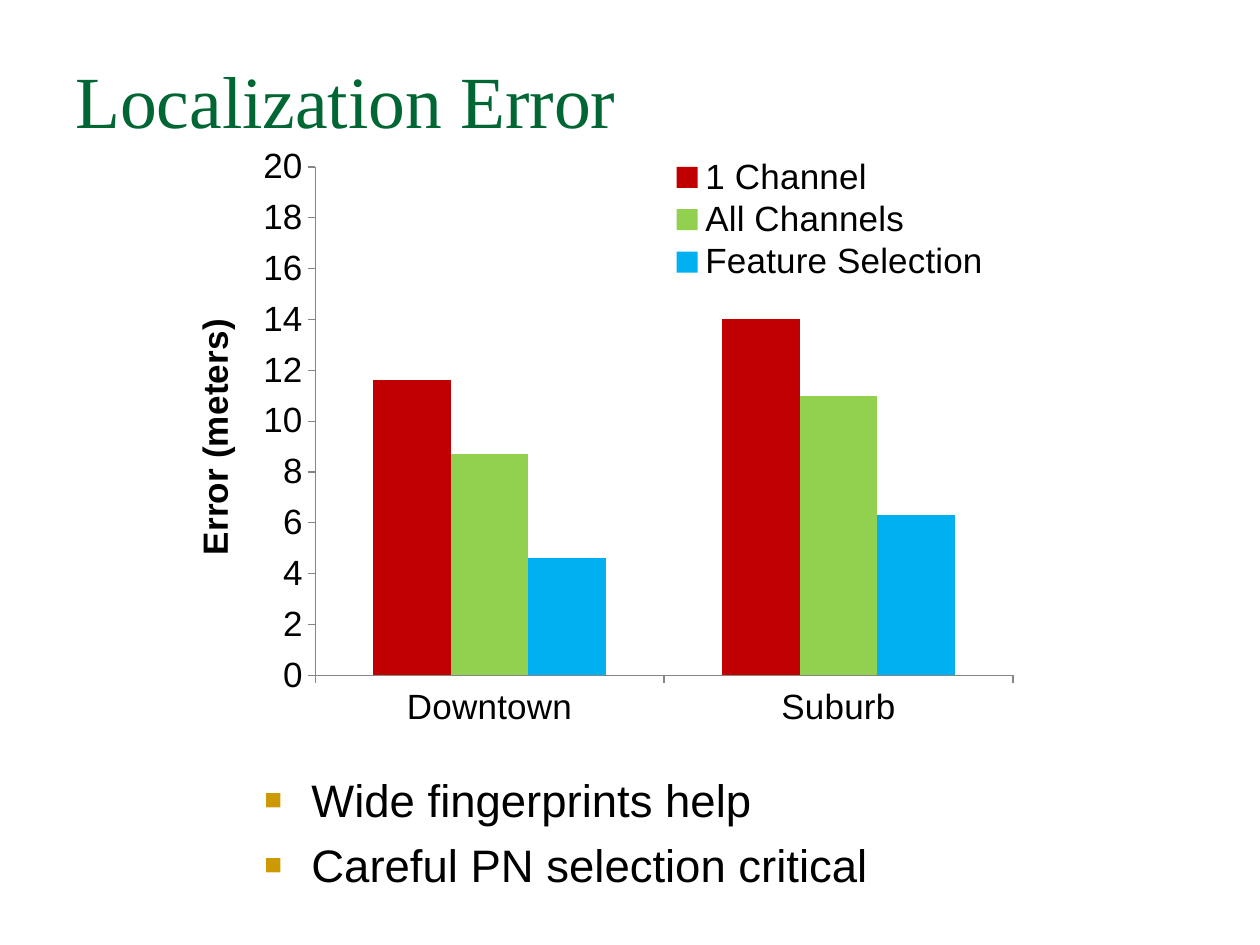
"""Build the localization error slide with a clustered column chart."""
from lxml.etree import SubElement
from pptx import Presentation
from pptx.chart.data import CategoryChartData
from pptx.dml.color import RGBColor
from pptx.enum.chart import XL_CHART_TYPE as ChartType
from pptx.enum.chart import XL_LEGEND_POSITION as LegendPosition
from pptx.enum.chart import XL_TICK_MARK as TickMark
from pptx.enum.text import MSO_ANCHOR as Anchor
from pptx.oxml.ns import qn
from pptx.util import Emu, Pt

PX_PER_INCH = 126
BLACK = "000000"
AXIS_GREY = "868686"
ERRORS = [
    ("1 Channel", "C00000", (11.6, 14)),
    ("All Channels", "92D050", (8.7, 11)),
    ("Feature Selection", "00B0F0", (4.6, 6.3)),
]


def px(length):
    return Emu(round(length * 914400 / PX_PER_INCH))


def rgb(hex_color):
    return RGBColor.from_string(hex_color)


def set_font(font, family, size, color):
    font.name, font.size = family, Pt(size)
    font.color.rgb = rgb(color)


def add_text(slide, box, lines, family, size, color):
    frame = slide.shapes.add_textbox(*map(px, box)).text_frame
    frame.word_wrap = True
    frame.vertical_anchor = Anchor.TOP
    frame.text = "\n".join(lines)
    for paragraph in frame.paragraphs:
        set_font(paragraph.font, family, size, color)
    return frame


def add_bullet(paragraph, symbol, color, percent, indent):
    paragraph.space_before = Pt(6)
    properties = paragraph._p.get_or_add_pPr()
    properties.set("marL", str(px(indent)))
    properties.set("indent", str(-px(indent)))
    bullet_color = SubElement(properties, qn("a:buClr"))
    SubElement(bullet_color, qn("a:srgbClr"), val=color)
    SubElement(properties, qn("a:buSzPct"), val=str(percent * 1000))
    SubElement(properties, qn("a:buFont"), typeface="Arial")
    SubElement(properties, qn("a:buChar"), char=symbol)
    defaults = properties.find(qn("a:defRPr"))
    if defaults is not None:
        properties.append(defaults)


def set_layout(part, x, y, w, h, inner=False):
    layout = part.get_or_add_layout() if hasattr(part, "get_or_add_layout") else part.find(qn("c:layout"))
    if layout is None:
        layout = SubElement(part, qn("c:layout"))
        part.insert(0, layout)
    for child in list(layout):
        layout.remove(child)
    manual = SubElement(layout, qn("c:manualLayout"))
    if inner:
        SubElement(manual, qn("c:layoutTarget"), val="inner")
    for mode in ("xMode", "yMode"):
        SubElement(manual, qn(f"c:{mode}"), val="edge")
    for side, share in zip("xywh", (x, y, w, h)):
        SubElement(manual, qn(f"c:{side}"), val=str(share))


def style_axis(axis):
    axis.has_major_gridlines = False
    axis.major_tick_mark = TickMark.OUTSIDE
    axis.minor_tick_mark = TickMark.NONE
    axis.format.line.color.rgb = rgb(AXIS_GREY)
    axis.format.line.width = Pt(0.75)


def add_error_chart(slide, box):
    data = CategoryChartData()
    data.categories = ["Downtown", "Suburb"]
    for name, _, errors in ERRORS:
        data.add_series(name, errors)
    chart = slide.shapes.add_chart(ChartType.COLUMN_CLUSTERED, *map(px, box), data).chart
    set_font(chart.font, "Arial", 20, BLACK)
    chart.has_title = False

    plot = chart.plots[0]
    plot.gap_width, plot.overlap = 150, 0
    plot.vary_by_categories = False
    for series, (_, color, _) in zip(plot.series, ERRORS):
        series.format.fill.solid()
        series.format.fill.fore_color.rgb = rgb(color)

    error_axis = chart.value_axis
    for axis in (chart.category_axis, error_axis):
        style_axis(axis)
    error_axis.minimum_scale, error_axis.maximum_scale = 0, 20
    error_axis.major_unit = 2
    error_axis.tick_labels.number_format = "General"
    error_axis.tick_labels.number_format_is_linked = False
    axis_title = error_axis.axis_title.text_frame
    axis_title.text = "Error (meters)"
    title_font = axis_title.paragraphs[0].font
    set_font(title_font, "Arial", 20, BLACK)
    title_font.bold = True

    chart.has_legend = True
    chart.legend.position = LegendPosition.RIGHT
    chart.legend.include_in_layout = True
    legend = chart.legend._element
    legend_layout = legend.find(qn("c:layout"))
    if legend_layout is None:
        legend_layout = SubElement(legend, qn("c:layout"))
        legend.find(qn("c:legendPos")).addnext(legend_layout)
    set_layout(legend, 0.56, 0.03, 0.41, 0.21)
    set_layout(chart._chartSpace.chart.plotArea, 0.16, 0.05, 0.82, 0.82, inner=True)


def main():
    presentation = Presentation()
    presentation.slide_width, presentation.slide_height = px(1260), px(945)
    slide = presentation.slides.add_slide(presentation.slide_layouts[6])

    title = add_text(slide, (63, 38, 1134, 158), ["Localization Error"], "Times New Roman", 42, "006633")
    title.margin_top = px(17)
    add_error_chart(slide, (179, 136, 851, 620))
    findings = add_text(slide, (252, 766, 725, 147),
                        ["Wide fingerprints help", "Careful PN selection critical"], "Arial", 26, BLACK)
    for finding in findings.paragraphs:
        add_bullet(finding, "■", "CC9900", 65, 47)
    presentation.save("out.pptx")


if __name__ == "__main__":
    main()
